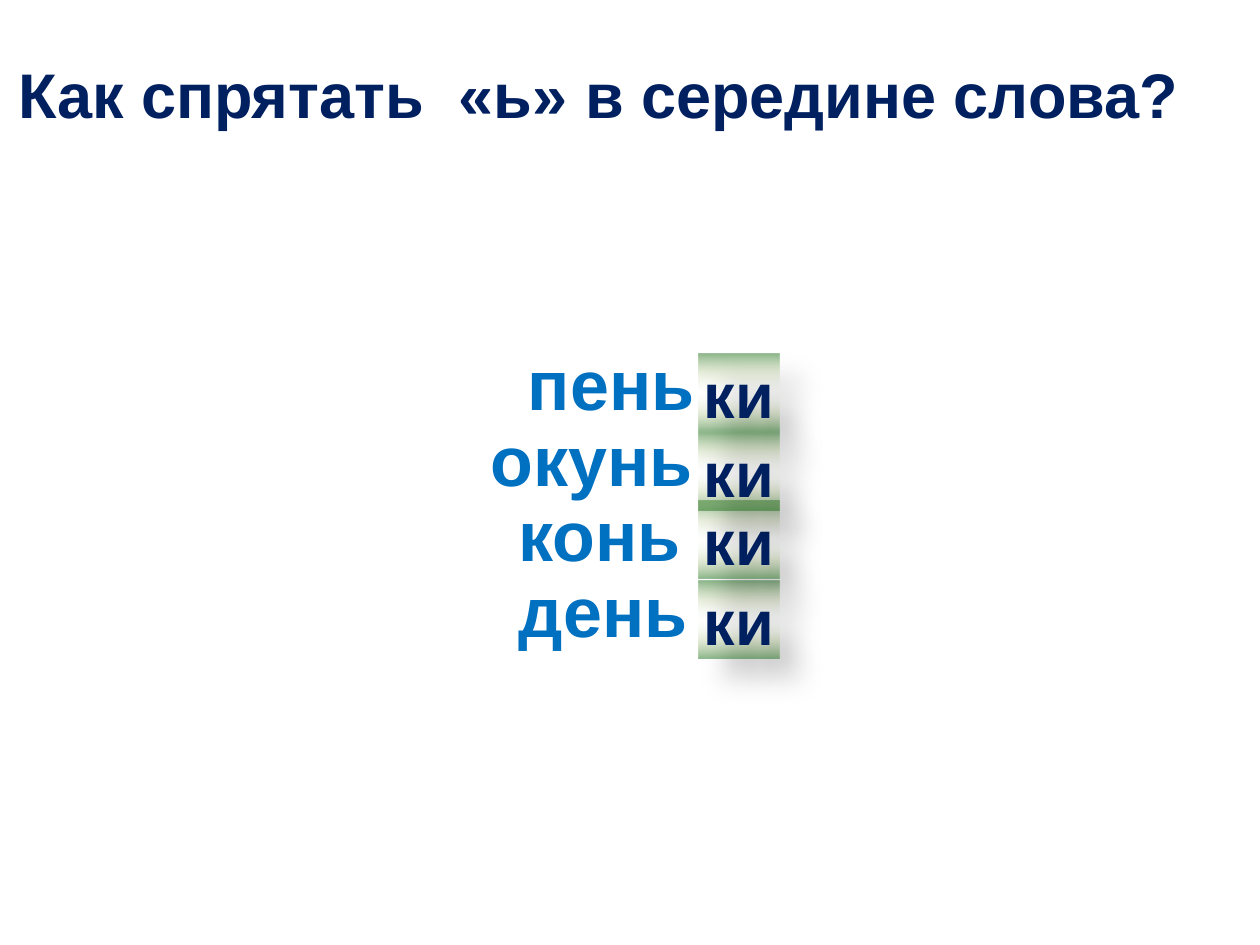
from pptx import Presentation
from pptx.dml.color import RGBColor
from pptx.enum.shapes import MSO_SHAPE as Shape
from pptx.enum.text import MSO_ANCHOR as Anchor, PP_ALIGN as Align
from pptx.oxml import parse_xml
from pptx.oxml.ns import nsdecls
from pptx.util import Pt

PX = 914400 // 126
FONT = "Arial"
COLORS = {
    "navy": "002060",
    "blue": "0070C0",
    "edge": "156B13",
    "mid": "9CB86E",
    "center": "DDEBCF",
    "shadow": "000000",
}
# position %, colour, opacity %
TILE_STOPS = [(0, "edge", 50), (25, "mid", 25), (50, "center", 0),
              (75, "mid", 25), (100, "edge", 50)]
# word, indent in px
WORDS = [("пень", 37), ("окунь", 0), ("конь", 28), ("день", 28)]
TILE_TOPS = [0, 227, 147, 79]


def emu(*lengths):
    return [length * PX for length in lengths]


def color_xml(name, opacity):
    return (f'<a:srgbClr val="{COLORS[name]}">'
            f'<a:alpha val="{opacity * 1000}"/></a:srgbClr>')


def style_text(paragraph, size, color, align):
    paragraph.alignment = align
    font = paragraph.font
    font.name, font.size, font.bold = FONT, Pt(size), True
    font.color.rgb = RGBColor.from_string(COLORS[color])


def add_title(slide, box):
    title = slide.shapes.title
    title.left, title.top, title.width, title.height = emu(*box)
    frame = title.text_frame
    frame.text = "Как спрятать  «ь» в середине слова?"
    frame.word_wrap = False
    frame.vertical_anchor = Anchor.TOP
    style_text(frame.paragraphs[0], 36, "navy", Align.CENTER)


def style_tile(tile):
    """Give the tile a translucent gradient and a soft shadow."""
    tile.line.fill.background()
    tile.fill.background()
    properties = tile._element.spPr
    stops = "".join(f'<a:gs pos="{position * 1000}">{color_xml(name, opacity)}</a:gs>'
                    for position, name, opacity in TILE_STOPS)
    gradient = parse_xml(
        f'<a:gradFill {nsdecls("a")} rotWithShape="1"><a:gsLst>{stops}</a:gsLst>'
        '<a:lin ang="5400000" scaled="0"/></a:gradFill>')
    properties.replace(properties.eg_fillProperties, gradient)
    properties.append(parse_xml(
        f'<a:effectLst {nsdecls("a")}><a:outerShdw blurRad="{Pt(15)}" '
        f'dist="{Pt(18)}" dir="2700000" algn="tl" rotWithShape="0">'
        f'{color_xml("shadow", 30)}</a:outerShdw></a:effectLst>'))


def add_suffix_tiles(slide, box):
    left, top, width, height = box
    for offset in TILE_TOPS:
        tile = slide.shapes.add_shape(
            Shape.RECTANGLE, *emu(left, top + offset, width, height))
        style_tile(tile)
        frame = tile.text_frame
        frame.text = "ки"
        frame.word_wrap = False
        frame.vertical_anchor = Anchor.MIDDLE
        style_text(frame.paragraphs[0], 36, "navy", Align.CENTER)


def add_words(slide, box):
    frame = slide.shapes.add_textbox(*emu(*box)).text_frame
    frame.word_wrap = True
    frame.margin_left = frame.margin_right = 0
    for index, (word, indent) in enumerate(WORDS):
        paragraph = frame.add_paragraph() if index else frame.paragraphs[0]
        paragraph.text = word
        paragraph.line_spacing = 0.9
        style_text(paragraph, 40, "blue", Align.LEFT)
        paragraph._p.get_or_add_pPr().set("marL", str(indent * PX))


def main():
    presentation = Presentation()
    presentation.slide_width, presentation.slide_height = emu(1260, 945)
    slide = presentation.slides.add_slide(presentation.slide_layouts[5])
    add_suffix_tiles(slide, (699, 354, 80, 78))
    add_words(slide, (491, 344, 227, 318))
    add_title(slide, (0, 49, 1197, 89))
    presentation.save("out.pptx")


if __name__ == "__main__":
    main()
